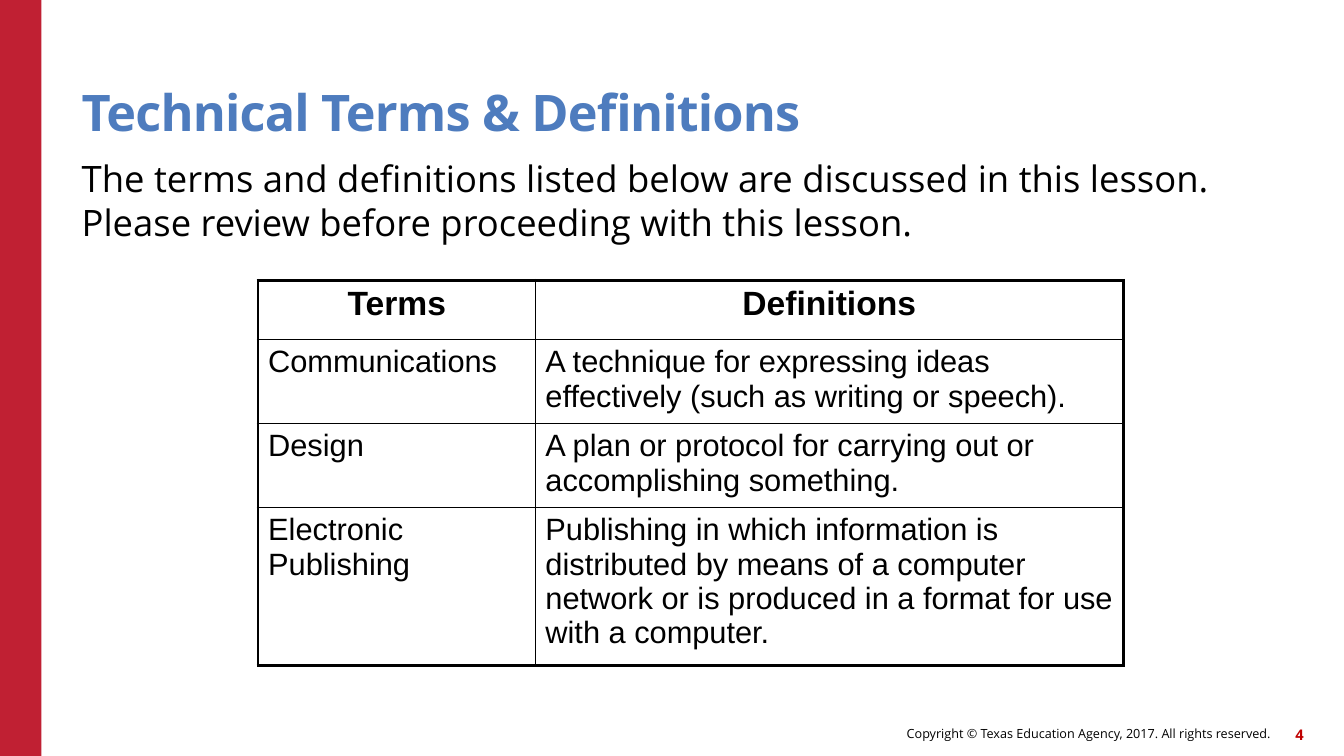
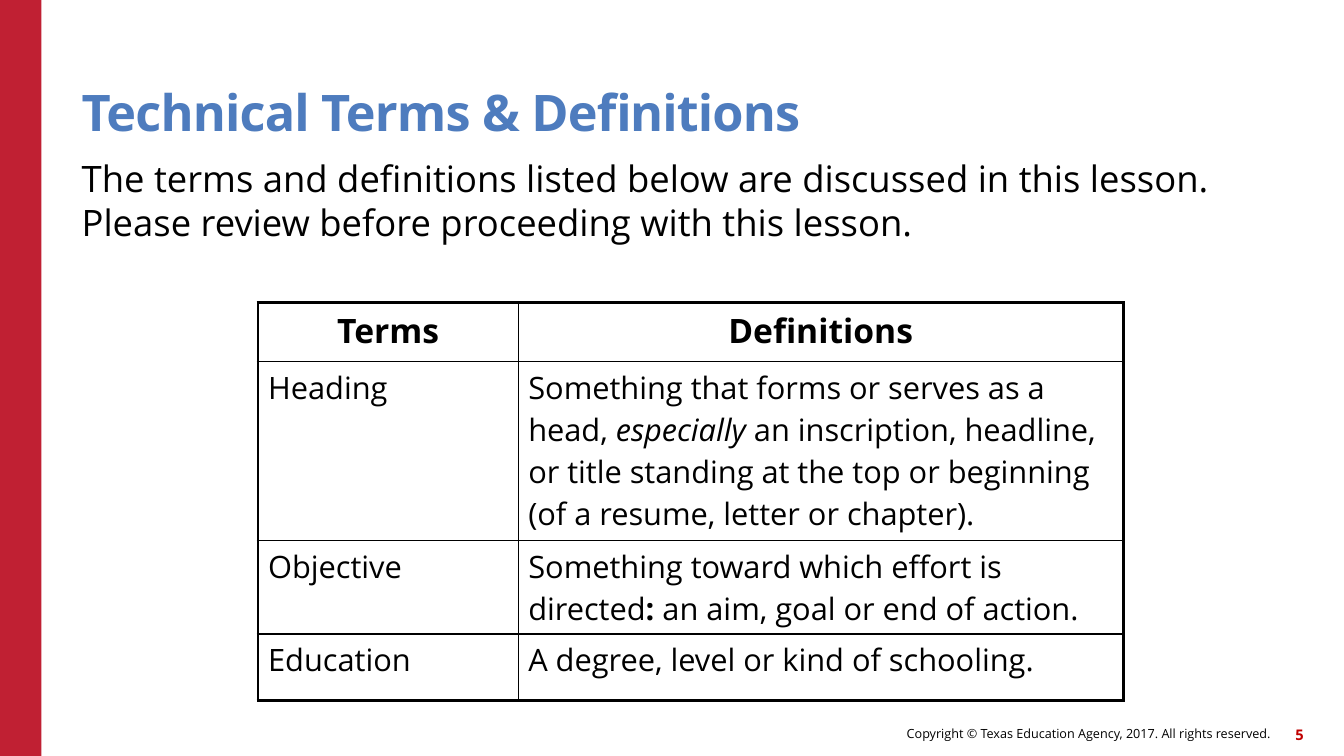
import copy

import lxml.etree
import pptx
import pptx.dml.color
import pptx.enum.shapes
import pptx.enum.text
import pptx.oxml.ns
import pptx.util

Inches = pptx.util.Inches
Pt = pptx.util.Pt
ALIGN = pptx.enum.text.PP_ALIGN
ANCHOR = pptx.enum.text.MSO_ANCHOR
qn = pptx.oxml.ns.qn

COLORS = {"band": "C02033", "title": "4E7CBE", "text": "000000", "page": "C00000"}
SANS = "Open Sans"
TITLE = "Technical Terms & Definitions"
INTRO = ("The terms and definitions listed below are discussed in this lesson. "
         "Please review before proceeding with this lesson.")
RIGHTS = "Copyright © Texas Education Agency, 2017. All rights reserved."
HEADS = ("Terms", "Definitions")
THIN, THICK = 1, 2.25

# A cell is a string, or a list of (text, style) parts; "b" is bold, "i" italic.
SLIDES = [
    {"page": 4, "font": "Arial", "top": 2.78, "cols": (2.75, 5.83),
     "highs": (0.59, 0.78, 0.78, 1.47), "rows": [
        ("Communications",
         "A technique for expressing ideas effectively (such as writing or speech)."),
        ("Design", "A plan or protocol for carrying out or accomplishing something."),
        ("Electronic Publishing",
         "Publishing in which information is distributed by means of a computer "
         "network or is produced in a format for use with a computer."),
     ]},
    {"page": 5, "font": SANS, "top": 3, "cols": (2.58, 6),
     "highs": (0.59, 1.77, 0.93, 0.66), "rows": [
        ("Heading",
         [("Something that forms or serves as a head, ", ""), ("especially", "i"),
          (" an inscription, headline, or title standing at the top or beginning "
           "(of a resume, letter or chapter).", "")]),
        ("Objective",
         [("Something toward which effort is directed", ""), (":", "b"),
          (" an aim, goal or end of action.", "")]),
        ("Education", "A degree, level or kind of schooling."),
     ]},
]


def color(name):
    return pptx.dml.color.RGBColor.from_string(COLORS[name])


def style(run, size, font=SANS, tint="text", bold=False, italic=False):
    run.font.size = Pt(size)
    run.font.name = font
    run.font.color.rgb = color(tint)
    run.font.bold = bold
    run.font.italic = italic


def add_band(slide):
    band = slide.shapes.add_shape(pptx.enum.shapes.MSO_SHAPE.RECTANGLE,
                                  0, 0, Inches(0.41), Inches(7.5))
    band.shadow.inherit = False
    band.fill.solid()
    band.fill.fore_color.rgb = color("band")
    band.line.fill.background()


def add_text(slide, box, text, size, anchor=ANCHOR.TOP, align=ALIGN.LEFT,
             ratio=1.0, **looks):
    """Add a one-paragraph box without insets and return its run."""
    frame = slide.shapes.add_textbox(*map(Inches, box)).text_frame
    frame.word_wrap = True
    frame.margin_left = frame.margin_right = 0
    frame.margin_top = frame.margin_bottom = 0
    frame.vertical_anchor = anchor
    frame.text = text
    para = frame.paragraphs[0]
    para.alignment = align
    para.line_spacing = ratio
    style(para.runs[0], size, **looks)
    return para.runs[0]


def add_frame(slide, page):
    """Add the band, title, intro and footer that every slide has."""
    add_band(slide)
    title = add_text(slide, (0.81, 0.45, 11, 0.96), TITLE, 36, ANCHOR.BOTTOM,
                     ratio=0.9, tint="title", bold=True)
    title.font._element.set("spc", "-60")
    add_text(slide, (0.81, 1.55, 12.09, 1.23), INTRO, 26)
    add_text(slide, (6.14, 7.12, 6.46, 0.32), RIGHTS, 9, ANCHOR.MIDDLE, ALIGN.RIGHT)
    add_text(slide, (12.51, 7.13, 0.42, 0.32), str(page), 10.5, ANCHOR.MIDDLE,
             ALIGN.RIGHT, tint="page", bold=True)


def set_edges(cell, widths):
    """Draw the cell borders; widths go left, right, top, bottom."""
    props = cell._tc.get_or_add_tcPr()
    for place, (side, width) in enumerate(zip("LRTB", widths)):
        line = lxml.etree.Element(qn("a:ln" + side), w=str(Pt(width)))
        fill = lxml.etree.SubElement(line, qn("a:solidFill"))
        lxml.etree.SubElement(fill, qn("a:srgbClr"), val=COLORS["text"])
        props.insert(place, line)


def end_style(para):
    """Give the paragraph end the style of the last run, so rows measure right."""
    end = lxml.etree.SubElement(para._p, qn("a:endParaRPr"))
    last = para.runs[-1].font._element
    for name, value in last.attrib.items():
        end.set(name, value)
    end.extend(copy.deepcopy(list(last)))


def fill_cell(cell, text, font, head):
    parts = [(text, "")] if isinstance(text, str) else text
    para = cell.text_frame.paragraphs[0]
    para.alignment = ALIGN.CENTER if head else ALIGN.LEFT
    for words, mark in parts:
        run = para.add_run()
        run.text = words
        style(run, 24 if head else 22, font, bold=head or mark == "b",
              italic=mark == "i")
    end_style(para)
    cell.fill.background()


def add_terms(slide, top, cols, highs, rows, font):
    rows = [HEADS] + rows
    table = slide.shapes.add_table(
        len(rows), len(cols), Inches(2.56), Inches(top),
        Inches(sum(cols)), Inches(sum(highs))).table
    table.first_row = table.horz_banding = False
    for col, width in zip(table.columns, cols):
        col.width = Inches(width)
    for r, (row, high) in enumerate(zip(rows, highs)):
        table.rows[r].height = Inches(high)
        for c, text in enumerate(row):
            cell = table.cell(r, c)
            fill_cell(cell, text, font, r == 0)
            outer = (c == 0, c == len(cols) - 1, r == 0, r == len(rows) - 1)
            set_edges(cell, [THICK if edge else THIN for edge in outer])


def main():
    deck = pptx.Presentation()
    deck.slide_width, deck.slide_height = Inches(13.33), Inches(7.5)
    for data in SLIDES:
        slide = deck.slides.add_slide(deck.slide_layouts[6])
        add_frame(slide, data["page"])
        add_terms(slide, data["top"], data["cols"], data["highs"],
                  data["rows"], data["font"])
    deck.save("out.pptx")


if __name__ == "__main__":
    main()
